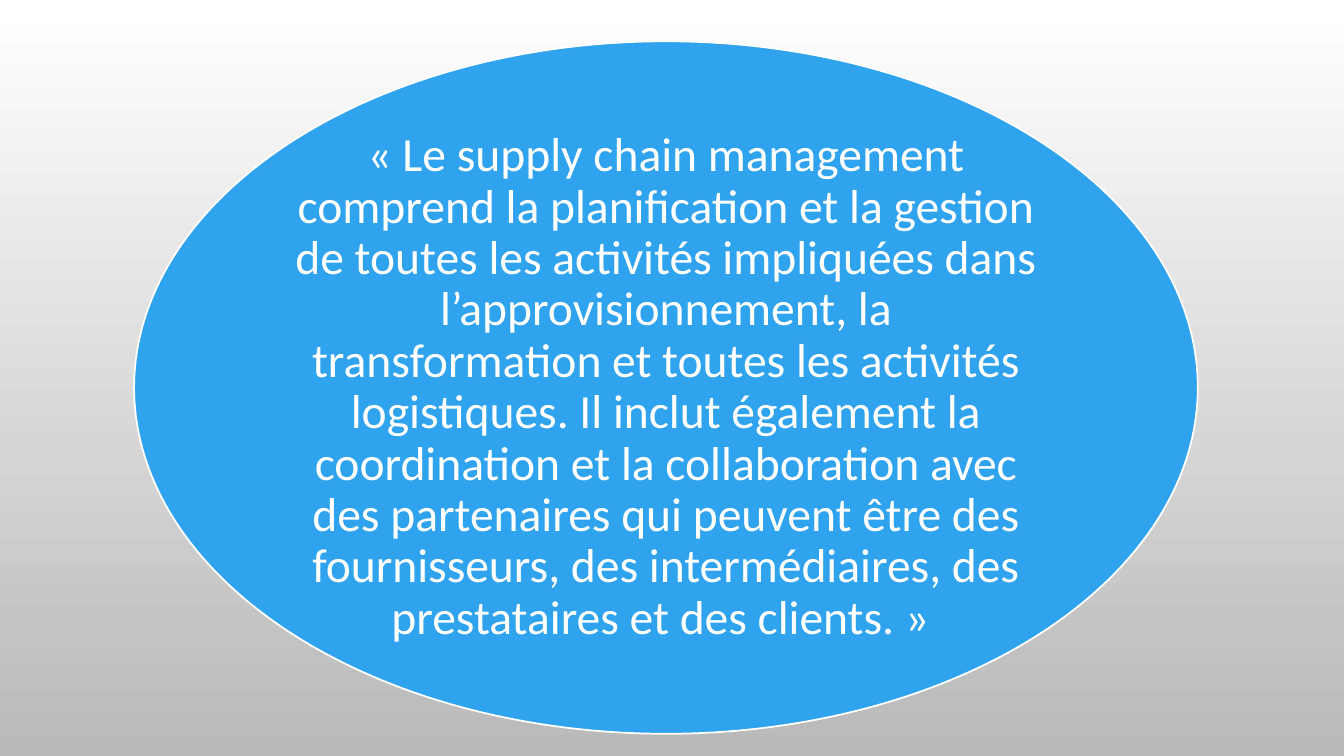
from dataclasses import dataclass

from pptx import Presentation
from pptx.dml.color import RGBColor
from pptx.enum.shapes import MSO_SHAPE
from pptx.enum.text import MSO_ANCHOR, PP_ALIGN
from pptx.util import Inches, Pt


@dataclass(frozen=True)
class Theme:
    white: RGBColor = RGBColor(0xFF, 0xFF, 0xFF)
    grey: RGBColor = RGBColor(0xB9, 0xB9, 0xB9)
    blue: RGBColor = RGBColor(0x2F, 0xA3, 0xEE)
    font: str = "Calibri"
    quote_size: Pt = Pt(34)


theme = Theme()
QUOTE = (
    "« Le supply chain management comprend la planification et la gestion "
    "de toutes les activités impliquées dans l’approvisionnement, la "
    "transformation et toutes les activités logistiques. Il inclut également "
    "la coordination et la collaboration avec des partenaires qui peuvent "
    "être des fournisseurs, des intermédiaires, des prestataires et des "
    "clients. » "
)

deck = Presentation()
deck.slide_width, deck.slide_height = Inches(13.33), Inches(7.5)
page = deck.slides.add_slide(deck.slide_layouts[6])

# Background: white at the top to grey at the bottom
backdrop = page.background.fill
backdrop.gradient()
backdrop.gradient_angle = 270
for stop, position, color in zip(
    backdrop.gradient_stops, (0, 1), (theme.white, theme.grey)
):
    stop.position = position
    stop.color.rgb = color

# Ellipse
ellipse = page.shapes.add_shape(
    MSO_SHAPE.OVAL, Inches(1.33), Inches(0.41), Inches(10.55), Inches(6.87)
)
ellipse.shadow.inherit = False
ellipse.fill.solid()
ellipse.fill.fore_color.rgb = theme.blue
ellipse.line.color.rgb = theme.white
ellipse.line.width = Pt(1.25)

# Quotation inside the ellipse
frame = ellipse.text_frame
frame.word_wrap = True
frame.vertical_anchor = MSO_ANCHOR.MIDDLE
frame.margin_left = frame.margin_right = Inches(0.05)
frame.margin_top = frame.margin_bottom = Inches(0.05)
para = frame.paragraphs[0]
para.text = QUOTE
para.alignment = PP_ALIGN.CENTER
para.line_spacing = 0.9
para.font.name = theme.font
para.font.size = theme.quote_size
para.font.color.rgb = theme.white

deck.save("out.pptx")
